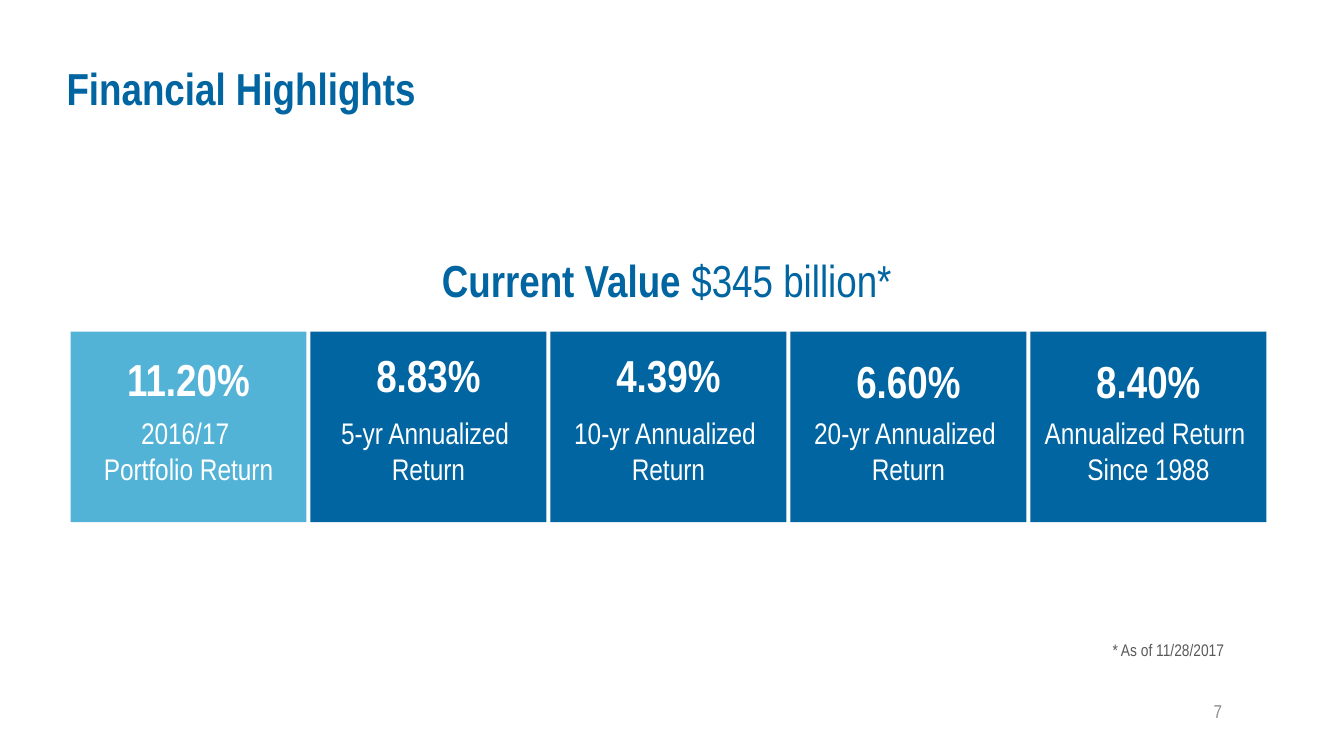
from dataclasses import dataclass

from pptx import Presentation
from pptx.dml.color import RGBColor
from pptx.enum.shapes import MSO_SHAPE
from pptx.enum.text import MSO_ANCHOR, PP_ALIGN
from pptx.util import Inches, Pt


@dataclass(frozen=True)
class Theme:
    """Colours, font and type sizes of the deck."""
    font: str = "Arial Narrow"
    blue: str = "0065A1"
    sky: str = "53B3D6"
    white: str = "FFFFFF"
    dark_grey: str = "595959"
    grey: str = "8C8C8C"
    heading: float = 32
    label: float = 21.3
    page_number: float = 13.3
    note: float = 12


@dataclass(frozen=True)
class Box:
    """A rectangle in inches."""
    left: float
    top: float
    width: float
    height: float

    def strip(self, top, height):
        """Return a full-width strip, given as shares of the height."""
        return Box(self.left, self.top + top * self.height, self.width, height * self.height)

    def column(self, index, count, gap):
        """Return one of several equal columns."""
        width = (self.width - gap * (count - 1)) / count
        return Box(self.left + index * (width + gap), self.top, width, self.height)

    def lengths(self):
        """Return the four lengths for a new shape."""
        return [Inches(value) for value in (self.left, self.top, self.width, self.height)]


THEME = Theme()
PAGE = Box(0, 0, 13.33, 7.5)
CARDS = (
    ("11.20%", "2016/17 \vPortfolio Return", THEME.sky, 0.08),
    ("8.83%", "5-yr Annualized \vReturn", THEME.blue, 0.06),
    ("4.39%", "10-yr Annualized \vReturn", THEME.blue, 0.06),
    ("6.60%", "20-yr Annualized \vReturn", THEME.blue, 0.09),
    ("8.40%", "Annualized Return \vSince 1988", THEME.blue, 0.09),
)


def style(para, size, color, align, bold=None):
    """Set the font and alignment of a paragraph."""
    para.alignment = align
    para.font.name = THEME.font
    para.font.size = Pt(size)
    para.font.bold = bold
    para.font.color.rgb = RGBColor.from_string(color)


def add_text(page, box, text, size, color, align=PP_ALIGN.CENTER, bold=None,
             anchor=MSO_ANCHOR.TOP, inset=0.1):
    """Place a wrapped text box and return its paragraph."""
    frame = page.shapes.add_textbox(*box.lengths()).text_frame
    frame.word_wrap = True
    frame.vertical_anchor = anchor
    frame.margin_left = frame.margin_right = Inches(inset)
    para = frame.paragraphs[0]
    para.text = text
    style(para, size, color, align, bold)
    return para


def add_title(page, box, text):
    """Fit the title placeholder into the box."""
    title = page.shapes.title
    title.left, title.top, title.width, title.height = box.lengths()
    title.text = text
    title.text_frame.vertical_anchor = MSO_ANCHOR.MIDDLE
    style(title.text_frame.paragraphs[0], THEME.heading, THEME.blue, PP_ALIGN.LEFT, True)


def add_current_value(page, box, name, value):
    """Place the centred headline with a bold name and a plain value."""
    para = add_text(page, box, "", THEME.heading, THEME.blue, anchor=MSO_ANCHOR.MIDDLE)
    for text, bold in ((name, True), (value, False)):
        span = para.add_run()
        span.text = text
        span.font.bold = bold


def add_card(page, box, figure, label, color, figure_top):
    """Place a filled card with a figure above its label."""
    card = page.shapes.add_shape(MSO_SHAPE.RECTANGLE, *box.lengths())
    card.shadow.inherit = False
    card.fill.solid()
    card.fill.fore_color.rgb = RGBColor.from_string(color)
    card.line.fill.background()
    add_text(page, box.strip(figure_top, 0.34), figure, THEME.heading, THEME.white, bold=True)
    add_text(page, box.strip(0.41, 0.43), label, THEME.label, THEME.white)


def add_cards(page, box):
    """Place the return cards in equal columns."""
    for index, card in enumerate(CARDS):
        add_card(page, box.column(index, len(CARDS), 0.04), *card)


def add_footer(page, box, note, number):
    """Place the note and the page number at the right of the box."""
    add_text(page, box.strip(0, 0.31), note, THEME.note, THEME.dark_grey,
             PP_ALIGN.RIGHT, anchor=MSO_ANCHOR.MIDDLE)
    add_text(page, box.strip(0.58, 0.42), number, THEME.page_number, THEME.grey,
             PP_ALIGN.RIGHT, anchor=MSO_ANCHOR.MIDDLE, inset=0.12)


def add_highlights_page(deck):
    """Build the financial highlights page."""
    page = deck.slides.add_slide(deck.slide_layouts[5])
    add_title(page, Box(0.56, 0.24, 12.22, 1.25), "Financial Highlights")
    add_current_value(page, PAGE.strip(0.32, 0.1), "Current Value ", "$345 billion* ")
    add_cards(page, Box(0.7, 3.29, 11.86, 1.89))
    add_footer(page, Box(0.46, 6.3, 11.78, 0.96), "* As of 11/28/2017", "7")


def main():
    """Create and save the deck."""
    deck = Presentation()
    deck.slide_width, deck.slide_height = Inches(PAGE.width), Inches(PAGE.height)
    add_highlights_page(deck)
    deck.save("out.pptx")


if __name__ == "__main__":
    main()
